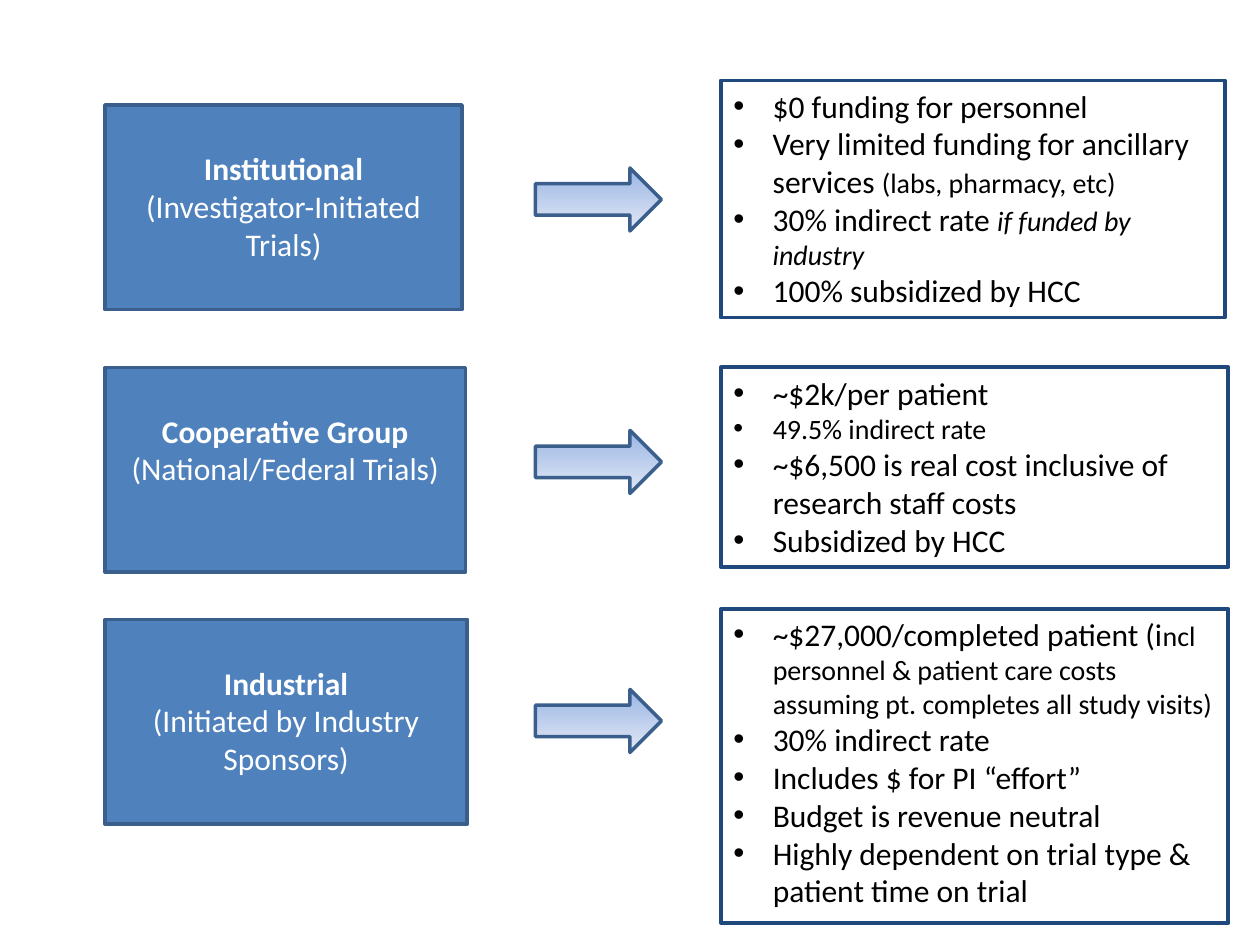
from lxml import etree
from pptx import Presentation
from pptx.dml.color import RGBColor
from pptx.enum import shapes, text
from pptx.oxml.ns import qn
from pptx.util import Pt

WHITE = RGBColor(0xFF, 0xFF, 0xFF)
BLACK = RGBColor(0x00, 0x00, 0x00)
BLUE = RGBColor(0x4F, 0x81, 0xBD)
BLUE_EDGE = RGBColor(0x3A, 0x5F, 0x8C)
NAVY = RGBColor(0x1F, 0x49, 0x7D)
ARROW_TOP = RGBColor(0x9A, 0xB5, 0xE4)
ARROW_BOTTOM = RGBColor(0xE1, 0xE8, 0xF5)

LEFT, ARROW_LEFT, DETAIL_LEFT = 60, 306, 412
BOX_HEIGHT = 117
SMALL = {"size": 16}

# Each detail is one bullet: a list of (text, format) runs.
TRIALS = [
    {"name": "Institutional", "note": "(Investigator-Initiated Trials)",
     "top": 60, "width": 204, "arrow_top": 96, "detail_box": (46, 288, 135.5),
     "details": [
         [("$0 funding for personnel", {})],
         [("Very limited funding for ancillary services ", {}),
          ("(labs, pharmacy, etc)", SMALL)],
         [("30% indirect rate ", {}),
          ("if funded by industry", {"size": 16, "italic": True})],
         [("100% subsidized by HCC", {})]]},
    {"name": "Cooperative Group", "note": "(National/Federal Trials)",
     "top": 210, "width": 206, "arrow_top": 246, "detail_box": (210, 290, 114),
     "details": [
         [("~$2k/per patient", {})],
         [("49.5% indirect rate", SMALL)],
         [("~$6,500 is real cost inclusive of research staff costs", {})],
         [("Subsidized by HCC", {})]]},
    {"name": "Industrial", "note": "(Initiated by Industry Sponsors)",
     "top": 354, "width": 207, "arrow_top": 394, "detail_box": (348, 290, 179.5),
     "details": [
         [("~$27,000/completed patient (i", {}),
          ("ncl personnel & patient care costs assuming pt. completes "
           "all study visits)", SMALL)],
         [("30% indirect rate", {})],
         [("Includes $ for PI “effort”", {})],
         [("Budget is revenue neutral", {})],
         [("Highly dependent on trial type & patient time on trial", {})]]},
]


def add_run(paragraph, words, size=18, color=BLACK, bold=False, italic=False):
    run = paragraph.add_run()
    run.text = words
    font = run.font
    font.name, font.size, font.bold, font.italic = "Calibri", Pt(size), bold, italic
    font.color.rgb = color


def add_bullet(paragraph, indent=22.5):
    properties = paragraph._p.get_or_add_pPr()
    properties.set("marL", str(Pt(indent)))
    properties.set("indent", str(-Pt(indent)))
    etree.SubElement(properties, qn("a:buFont")).set("typeface", "Arial")
    etree.SubElement(properties, qn("a:buChar")).set("char", "•")


class SlideBuilder:
    """Holds the current slide and draws its elements; lengths are in points."""

    def __init__(self, slide):
        self.slide = slide

    def shape(self, kind, left, top, width, height, edge, weight):
        shape = self.slide.shapes.add_shape(
            kind, Pt(left), Pt(top), Pt(width), Pt(height))
        shape.shadow.inherit = False
        shape.line.color.rgb = edge
        shape.line.width = Pt(weight)
        return shape

    def text_box(self, box, fill, edge, weight, align, paragraphs,
                 color=BLACK, bullets=False, top_inset=3.6):
        shape = self.shape(shapes.MSO_SHAPE.RECTANGLE, *box, edge, weight)
        shape.fill.solid()
        shape.fill.fore_color.rgb = fill
        frame = shape.text_frame
        frame.word_wrap = True
        frame.vertical_anchor = text.MSO_ANCHOR.TOP
        frame.margin_top = Pt(top_inset)
        for index, runs in enumerate(paragraphs):
            paragraph = frame.add_paragraph() if index else frame.paragraphs[0]
            paragraph.alignment = align
            if bullets:
                add_bullet(paragraph)
            for words, style in runs:
                add_run(paragraph, words, color=color, **style)

    def trial_box(self, top, width, name, note):
        self.text_box((LEFT, top, width, BOX_HEIGHT), BLUE, BLUE_EDGE, 2,
                      text.PP_ALIGN.CENTER,
                      [[(name, {"bold": True})], [(note, {})]],
                      color=WHITE, top_inset=25.2)

    def arrow(self, top):
        shape = self.shape(shapes.MSO_SHAPE.RIGHT_ARROW,
                           ARROW_LEFT, top, 72, 36, BLUE_EDGE, 2)
        shape.fill.gradient()
        shape.fill.gradient_angle = 270
        for stop, color in zip(shape.fill.gradient_stops, (ARROW_TOP, ARROW_BOTTOM)):
            stop.color.rgb = color

    def detail_box(self, top, width, height, details):
        self.text_box((DETAIL_LEFT, top, width, height), WHITE, NAVY, 2.25,
                      text.PP_ALIGN.LEFT, details, bullets=True)


def main():
    presentation = Presentation()
    presentation.slide_width, presentation.slide_height = Pt(720), Pt(540)
    blank_layout = presentation.slide_layouts[6]
    builder = SlideBuilder(presentation.slides.add_slide(blank_layout))
    for trial in TRIALS:
        builder.trial_box(trial["top"], trial["width"], trial["name"], trial["note"])
        builder.arrow(trial["arrow_top"])
        builder.detail_box(*trial["detail_box"], trial["details"])
    presentation.save("out.pptx")


if __name__ == "__main__":
    main()
